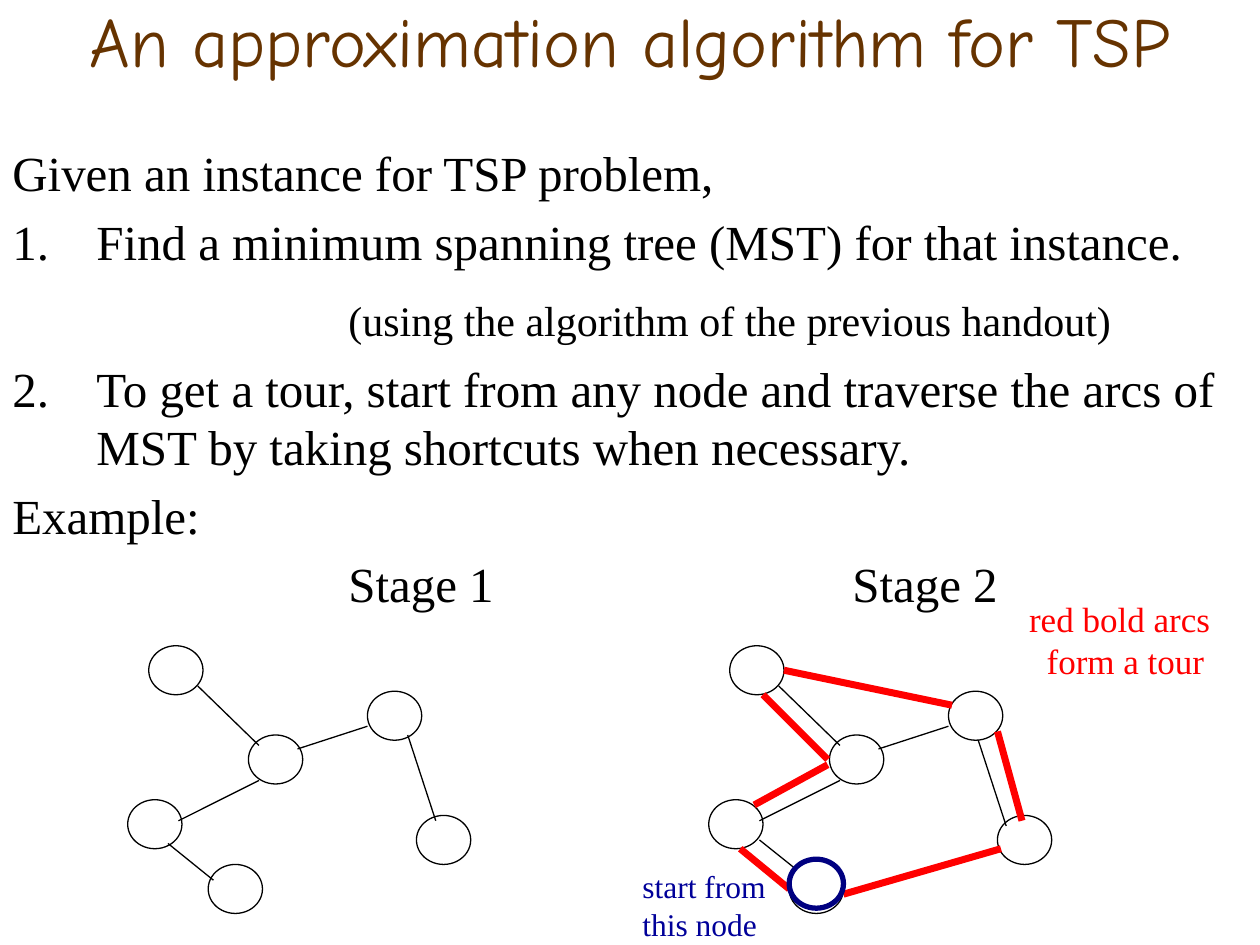
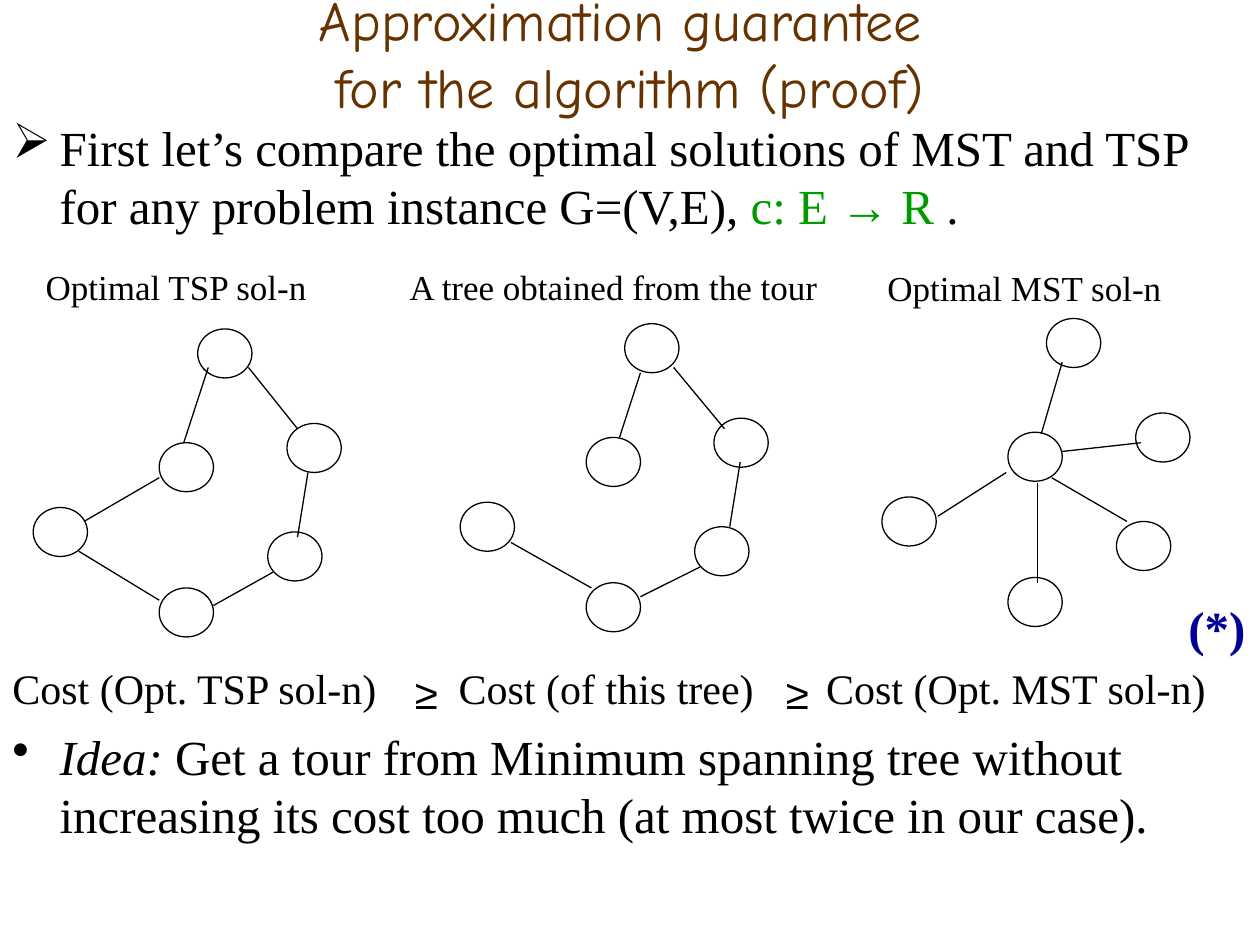
from dataclasses import dataclass
from typing import NamedTuple

from lxml.etree import SubElement
from pptx import Presentation
from pptx.dml.color import RGBColor
from pptx.enum.shapes import MSO_CONNECTOR, MSO_SHAPE
from pptx.enum.text import MSO_ANCHOR, PP_ALIGN
from pptx.oxml.ns import qn
from pptx.util import Pt

COLORS = {
    "background": "FFFFFF",
    "text": "000000",
    "title": "663300",
    "tour": "FF0000",
    "start": "000080",
    "note": "000099",
    "formula": "009900",
}
TITLE_FONT = "Comic Neue"
BODY_FONT = "Times New Roman"
SYMBOL_FONT = "Arial"
SLIDE_WIDTH, SLIDE_HEIGHT = 720, 540
NODE_WIDTH, NODE_HEIGHT = 31, 28
BODY_SIZE = 28
BODY_GAP = 5.6


class Point(NamedTuple):
    x: float
    y: float


class Arc(NamedTuple):
    x1: float
    y1: float
    x2: float
    y2: float


class Box(NamedTuple):
    left: float
    top: float
    width: float
    height: float


@dataclass
class TextRun:
    text: str
    size: float = BODY_SIZE
    color: str = "text"
    font: str = BODY_FONT
    bold: bool = False
    italic: bool = False


@dataclass
class TextLine:
    runs: list[TextRun]
    left: float = 0
    hanging: float = 0
    space_before: float = 0
    bullet: str = ""
    number: int = 0


@dataclass
class Graph:
    nodes: list[Point]
    arcs: list[Arc]
    shift: Point = Point(0, 0)


def rgb(name: str) -> RGBColor:
    return RGBColor.from_string(COLORS[name])


def add_run(paragraph, text_run: TextRun) -> None:
    run = paragraph.add_run()
    run.text = text_run.text
    run.font.name = text_run.font
    run.font.size = Pt(text_run.size)
    run.font.bold = text_run.bold
    run.font.italic = text_run.italic
    run.font.color.rgb = rgb(text_run.color)


def set_indent(paragraph, line: TextLine) -> None:
    """Set the left margin, the hanging indent and the bullet or number."""
    properties = paragraph._p.get_or_add_pPr()
    properties.set("marL", str(Pt(line.left)))
    properties.set("indent", str(Pt(-line.hanging)))
    if line.number:
        SubElement(properties, qn("a:buAutoNum"), type="arabicPeriod", startAt=str(line.number))
    elif line.bullet:
        SubElement(properties, qn("a:buChar"), char=line.bullet)


def add_text(slide, box: Box, lines: list[TextLine]) -> None:
    shape = slide.shapes.add_textbox(*map(Pt, box))
    frame = shape.text_frame
    frame.word_wrap = True
    for index, line in enumerate(lines):
        paragraph = frame.add_paragraph() if index else frame.paragraphs[0]
        paragraph.space_before = Pt(line.space_before)
        set_indent(paragraph, line)
        for text_run in line.runs:
            add_run(paragraph, text_run)


def add_label(slide, box: Box, text_run: TextRun) -> None:
    add_text(slide, box, [TextLine([text_run])])


def add_title(slide, lines: list[str], size: float, height: float) -> None:
    shape = slide.shapes.add_textbox(0, 0, Pt(SLIDE_WIDTH), Pt(height))
    frame = shape.text_frame
    frame.word_wrap = True
    frame.vertical_anchor = MSO_ANCHOR.MIDDLE
    paragraph = frame.paragraphs[0]
    paragraph.alignment = PP_ALIGN.CENTER
    for index, text in enumerate(lines):
        if index:
            paragraph.add_line_break()
        add_run(paragraph, TextRun(text, size, "title", TITLE_FONT))


def add_node(slide, place: Point, color: str = "text", weight: float = 0.75) -> None:
    shape = slide.shapes.add_shape(
        MSO_SHAPE.OVAL, Pt(place.x), Pt(place.y), Pt(NODE_WIDTH), Pt(NODE_HEIGHT)
    )
    shape.shadow.inherit = False
    shape.fill.solid()
    shape.fill.fore_color.rgb = rgb("background")
    shape.line.color.rgb = rgb(color)
    shape.line.width = Pt(weight)


def add_arc(slide, arc: Arc, color: str = "text", weight: float = 0.75) -> None:
    connector = slide.shapes.add_connector(MSO_CONNECTOR.STRAIGHT, *map(Pt, arc))
    connector.line.color.rgb = rgb(color)
    connector.line.width = Pt(weight)
    SubElement(connector._element.spPr, qn("a:effectLst"))


def add_graph(slide, graph: Graph) -> None:
    """Draw nodes and arcs, all moved by the shift of the graph."""
    dx, dy = graph.shift
    for node in graph.nodes:
        add_node(slide, Point(node.x + dx, node.y + dy))
    for arc in graph.arcs:
        add_arc(slide, Arc(arc.x1 + dx, arc.y1 + dy, arc.x2 + dx, arc.y2 + dy))


def add_slide(presentation):
    slide = presentation.slides.add_slide(presentation.slide_layouts[6])
    slide.background.fill.solid()
    slide.background.fill.fore_color.rgb = rgb("background")
    return slide


def build_algorithm_slide(presentation) -> None:
    slide = add_slide(presentation)
    add_title(slide, ["An approximation algorithm for TSP"], 40, 45)
    add_text(slide, Box(0, 78, SLIDE_WIDTH, 235), [
        TextLine([TextRun("Given an instance for TSP problem,")]),
        TextLine([TextRun("Find a minimum spanning tree (MST) for that instance.")],
                 48, 48, BODY_GAP, number=1),
        TextLine([TextRun("(using the algorithm of the previous handout)", 24)],
                 192, space_before=13.7),
        TextLine([TextRun("To get a tour, start from any node and traverse the arcs of "
                          "MST by taking shortcuts when necessary.")],
                 48, 48, 7.7, number=2),
        TextLine([TextRun("Example:")], space_before=BODY_GAP),
    ])
    for left, stage in ((192, "Stage 1"), (480, "Stage 2")):
        add_label(slide, Box(left, 313, 120, 41), TextRun(stage))

    nodes = [Point(73, 457), Point(210, 395), Point(85, 369),
             Point(142, 420), Point(238, 466), Point(119, 494)]
    upper_arcs = [Arc(113, 392, 148, 426), Arc(170, 428, 210, 415), Arc(102, 469, 148, 446)]
    first_arcs = [Arc(96, 482, 122, 503), Arc(233, 420, 249, 469)]
    second_arcs = [Arc(102, 480, 127, 500), Arc(227, 423, 243, 472)]
    add_graph(slide, Graph(nodes, upper_arcs + first_arcs))
    add_graph(slide, Graph(nodes, upper_arcs + second_arcs, Point(332, 0)))

    tour = [Arc(451, 508, 423, 485), Arc(431, 460, 473, 437), Arc(473, 434, 436, 397),
            Arc(448, 383, 544, 403), Arc(570, 418, 584, 469), Arc(572, 485, 482, 511)]
    for arc in tour:
        add_arc(slide, arc, "tour", 4)
    add_node(slide, Point(451, 491), "start", 3)
    add_label(slide, Box(360, 492, 110, 50), TextRun("start from this node", 18, "note"))
    add_text(slide, Box(581, 338, 119, 55), [
        TextLine([TextRun("red bold arcs", 20, "tour")]),
        TextLine([TextRun("form a tour", 20, "tour")], left=10),
    ])


def build_guarantee_slide(presentation) -> None:
    slide = add_slide(presentation)
    add_title(slide, ["Approximation guarantee ", "for the algorithm (proof)"], 32, 60.5)
    add_text(slide, Box(0, 63.4, SLIDE_WIDTH, 75), [
        TextLine([
            TextRun("First let’s compare the optimal solutions of MST and TSP "
                    "for any problem instance G=(V,E), "),
            TextRun("c: E → R", color="formula"),
            TextRun(" ."),
        ], 27, 27, bullet="➢"),
    ])
    add_text(slide, Box(0, 411.4, SLIDE_WIDTH, 75), [
        TextLine([
            TextRun("Idea:", italic=True),
            TextRun(" Get a tour from Minimum spanning tree without "
                    "increasing its cost too much (at most twice in our case)."),
        ], 27, 27, bullet="•"),
    ])

    nodes = [Point(19, 290), Point(164, 242), Point(113, 188),
             Point(91, 253), Point(153, 304), Point(91, 336)]
    tour_arcs = [Arc(48, 298, 91, 273), Arc(45, 315, 91, 343), Arc(105, 253, 119, 210),
                 Arc(142, 210, 170, 245), Arc(176, 270, 170, 307), Arc(122, 346, 156, 327)]
    path_arcs = [Arc(110, 253, 122, 216), Arc(141, 213, 170, 248), Arc(179, 267, 173, 304),
                 Arc(122, 344, 156, 327), Arc(48, 313, 94, 339)]
    star_arcs = [Arc(110, 254, 122, 213), Arc(122, 264, 167, 259), Arc(116, 279, 159, 304),
                 Arc(108, 282, 108, 339), Arc(90, 276, 51, 301)]
    for graph in (
        Graph(nodes, tour_arcs),
        Graph(nodes, path_arcs, Point(244, -3)),
        Graph(nodes, star_arcs, Point(485, -6)),
    ):
        add_graph(slide, graph)

    for left, top, width, text in (
        (19, 148, 241, "Optimal TSP sol-n"),
        (227, 148, 261, "A tree obtained from the tour"),
        (500, 149, 220, "Optimal MST sol-n"),
    ):
        add_label(slide, Box(left, top, width, 31), TextRun(text, 20))
    for left, width, text in (
        (0, 241, "Cost (Opt. TSP sol-n)"),
        (255, 204, "Cost (of this tree)"),
        (465, 238, "Cost (Opt. MST sol-n)"),
    ):
        add_label(slide, Box(left, 375, width, 36), TextRun(text, 24))
    for left in (230, 442):
        add_label(slide, Box(left, 378, 28, 36), TextRun("≥", 24, font=SYMBOL_FONT))
    add_label(slide, Box(672, 338, 48, 41), TextRun("(*)", color="note", bold=True))


def main() -> None:
    presentation = Presentation()
    presentation.slide_width = Pt(SLIDE_WIDTH)
    presentation.slide_height = Pt(SLIDE_HEIGHT)
    build_algorithm_slide(presentation)
    build_guarantee_slide(presentation)
    presentation.save("out.pptx")


if __name__ == "__main__":
    main()
